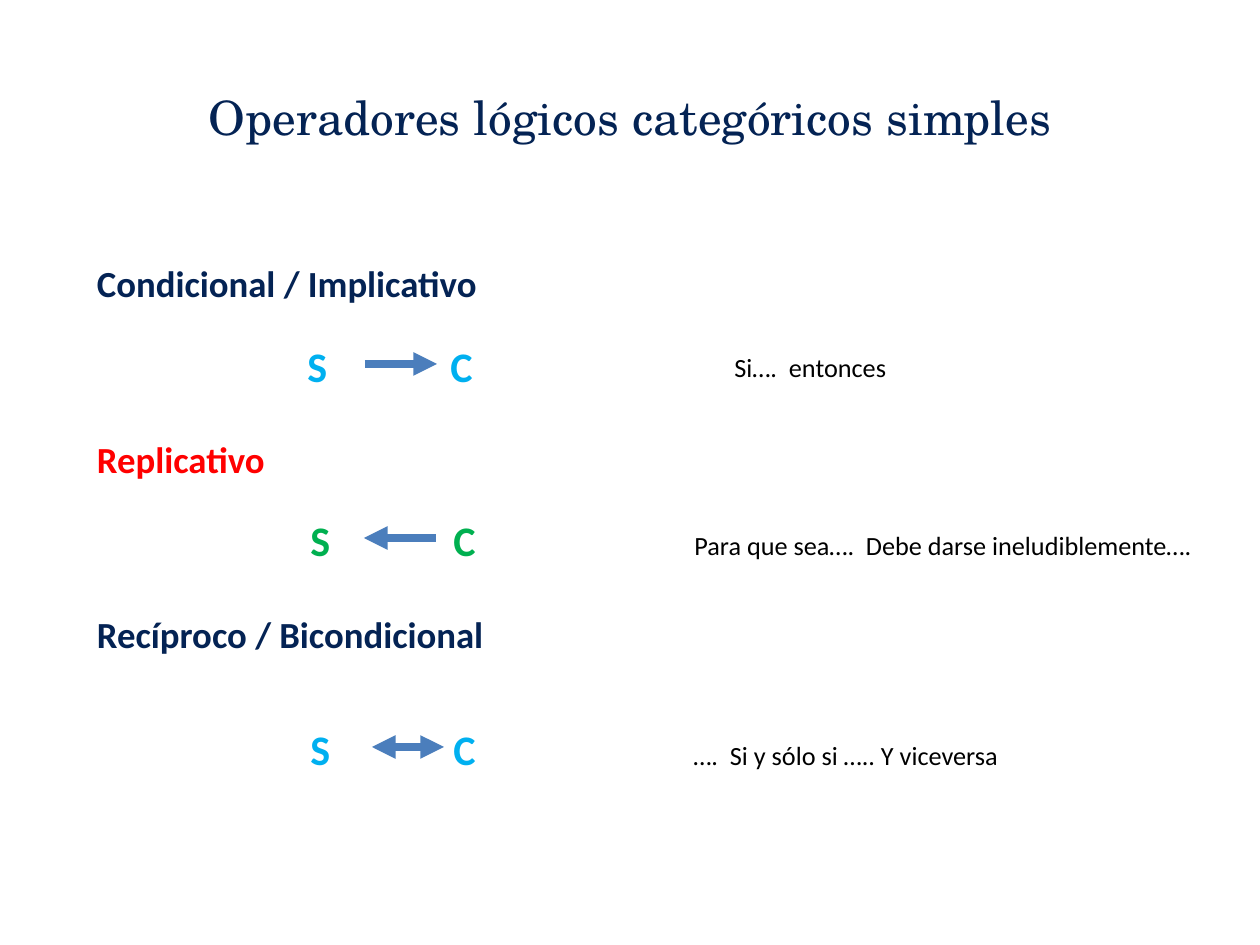
"""Build the slide on simple categorical logical operators."""
from pptx import Presentation, util as u
from pptx.dml.color import RGBColor
from pptx.enum import shapes, text
from pptx.oxml.ns import qn
from lxml import etree

PX = 914400 // 126
NAVY, RED, BLUE, GREEN = "042354", "FF0000", "00B0F0", "00B050"


def style(para, size, color, bold=False, face="Calibri"):
    font = para.font
    font.name, font.size, font.bold = face, u.Pt(size), bold
    font.color.rgb = RGBColor.from_string(color)


def label(x, y, w, h, words, size, color, bold=False):
    box = slide.shapes.add_textbox(x * PX, y * PX, w * PX, h * PX)
    box.text_frame.word_wrap = True
    box.text_frame.text = words
    for para in box.text_frame.paragraphs:
        style(para, size, color, bold)
    return box.text_frame


deck = Presentation()
deck.slide_width, deck.slide_height = 1260 * PX, 945 * PX
slide = deck.slides.add_slide(deck.slide_layouts[5])

title = slide.shapes.title
title.left, title.top, title.width, title.height = [n * PX for n in (63, 38, 1134, 157)]
title.text_frame.text = "Operadores lógicos categóricos simples"
title.text_frame.vertical_anchor = text.MSO_ANCHOR.MIDDLE
title.text_frame.paragraphs[0].alignment = text.PP_ALIGN.CENTER
style(title.text_frame.paragraphs[0], 27, NAVY, face="TeX Gyre Schola")

heads = ["Condicional / Implicativo", "Replicativo", "Recíproco / Bicondicional"]
frame = label(84, 255, 1134, 624, "\n".join(heads), 21, NAVY, True)
frame.margin_left = 13 * PX
for para in frame.paragraphs[1:]:
    para.space_before = u.Pt(75)
frame.paragraphs[1].font.color.rgb = RGBColor.from_string(RED)

rows = [
    (295, 334, BLUE, 365, 364, ["tailEnd"], 722, 345, 200, "Si….  entonces"),
    (298, 508, GREEN, 364, 538, ["headEnd"], 682, 523, 550,
     "Para que sea….  Debe darse ineludiblemente…."),
    (298, 717, BLUE, 372, 747, ["headEnd", "tailEnd"], 681, 733, 380,
     "….  Si y sólo si ….. Y viceversa"),
]
for x, y, color, start, level, ends, left, top, wide, words in rows:
    pair = label(x, y, 223, 63, "S\tC", 24, color, True)
    stops = etree.Element(qn("a:tabLst"))
    etree.SubElement(stops, qn("a:tab"), pos=str(143 * PX), algn="l")
    pair.paragraphs[0].font.color.rgb = RGBColor.from_string(color)
    pair.paragraphs[0]._p.get_or_add_pPr().insert(0, stops)

    arrow = slide.shapes.add_connector(
        shapes.MSO_CONNECTOR.STRAIGHT, start * PX, level * PX, (start + 72) * PX, level * PX)
    arrow.line.width = u.Pt(4.5)
    arrow.line.color.rgb = RGBColor.from_string("4B7EBC")
    for end in ends:
        etree.SubElement(arrow.line._get_or_add_ln(), qn("a:" + end), type="triangle")
    etree.SubElement(arrow._element.spPr, qn("a:effectLst"))

    label(left, top, wide, 44, words, 15, "000000")

deck.save("out.pptx")
